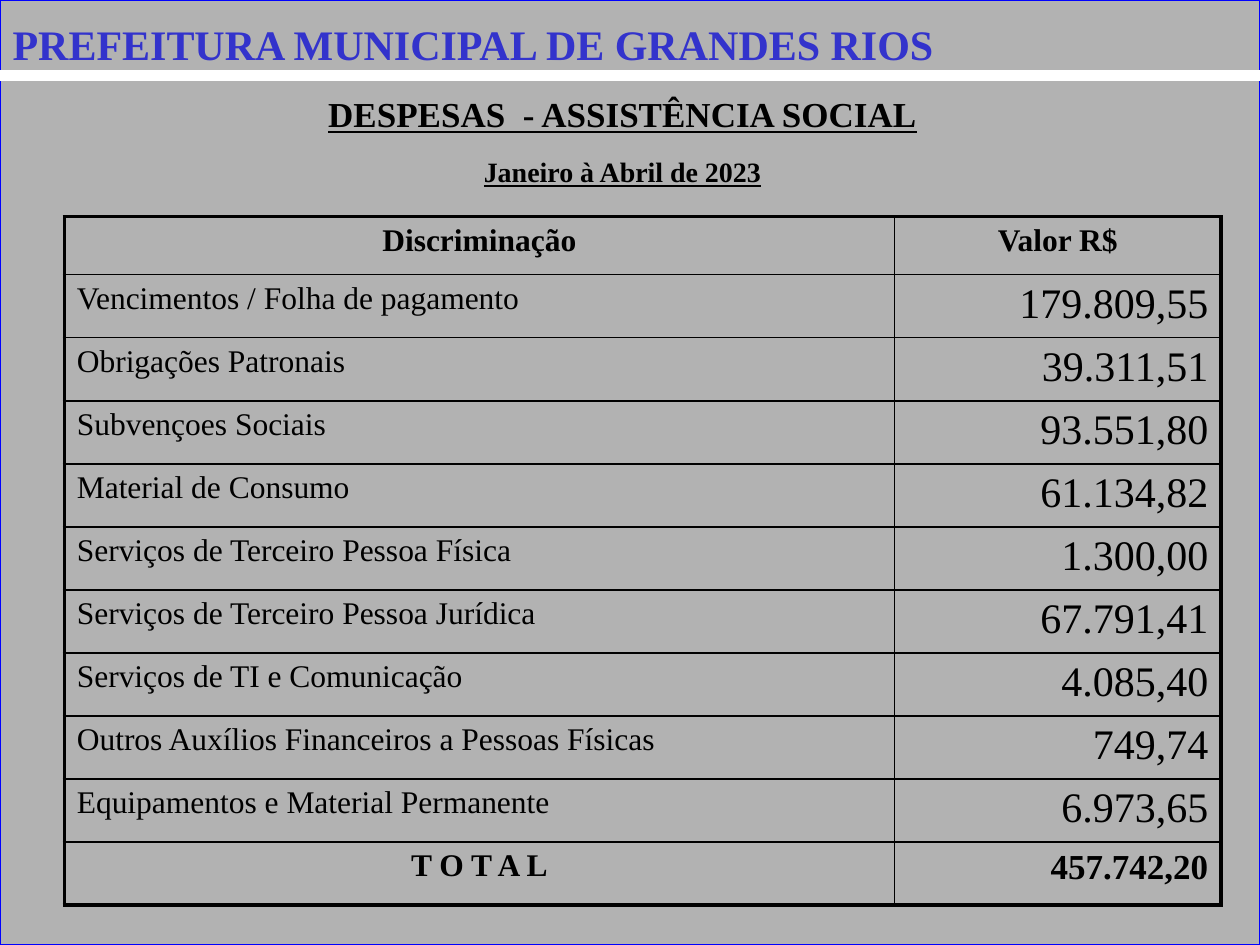
import dataclasses

import lxml.etree
import pptx
import pptx.dml.color
import pptx.enum.shapes
import pptx.enum.text
import pptx.oxml.ns
import pptx.util

Inches = pptx.util.Inches
Pt = pptx.util.Pt
ALIGN = pptx.enum.text.PP_ALIGN
ANCHOR = pptx.enum.text.MSO_ANCHOR


@dataclasses.dataclass(frozen=True)
class Theme:
    font: str = "Times New Roman"
    ink: str = "000000"
    title: str = "3333CC"
    shadow: str = "808080"
    panel: str = "B2B2B2"
    frame: str = "0000FF"
    rule: str = "FFFFFF"
    title_size: float = 24
    heading_size: float = 20
    period_size: float = 16
    label_size: float = 18
    value_size: float = 24
    total_size: float = 20
    outer_border: float = 2.25
    inner_border: float = 1


def rgb(color):
    return pptx.dml.color.RGBColor.from_string(color)


def add_xml(parent, tag, **attributes):
    return lxml.etree.SubElement(parent, pptx.oxml.ns.qn(tag), attributes)


class SlideBuilder:
    def __init__(self, slide, theme):
        self.slide = slide
        self.theme = theme

    def style_text(self, paragraph, text, size, color=None, bold=False, underline=False, align=ALIGN.LEFT):
        paragraph.text = text
        paragraph.alignment = align
        for run in paragraph.runs:
            run.font.name = self.theme.font
            run.font.size = Pt(size)
            run.font.bold = bold
            run.font.underline = underline
            run.font.color.rgb = rgb(color or self.theme.ink)

    def panel(self, left, top, width, height):
        panel = self.slide.shapes.add_shape(
            pptx.enum.shapes.MSO_SHAPE.RECTANGLE, left, top, width, height)
        panel.shadow.inherit = False
        panel.fill.solid()
        panel.fill.fore_color.rgb = rgb(self.theme.panel)
        panel.line.color.rgb = rgb(self.theme.frame)
        panel.line.width = Pt(0.75)

    def rule(self, left, top, width, weight):
        rule = self.slide.shapes.add_connector(
            pptx.enum.shapes.MSO_CONNECTOR.STRAIGHT, left, top, left + width, top)
        rule.line.color.rgb = rgb(self.theme.rule)
        rule.line.width = Pt(weight)
        add_xml(rule.element.spPr, "a:effectLst")

    def title(self, text, left, top, width, height):
        title = self.slide.shapes.title
        title.left, title.top, title.width, title.height = left, top, width, height
        frame = title.text_frame
        frame.word_wrap = True
        frame.auto_size = pptx.enum.text.MSO_AUTO_SIZE.NONE
        frame.vertical_anchor = ANCHOR.TOP
        self.style_text(frame.paragraphs[0], text, self.theme.title_size, self.theme.title, bold=True)
        # Text shadow goes right after the run's fill
        effects = lxml.etree.Element(pptx.oxml.ns.qn("a:effectLst"))
        shadow = add_xml(effects, "a:outerShdw", dist="38100", dir="2700000")
        add_xml(shadow, "a:srgbClr", val=self.theme.shadow)
        fill = title.element.find(".//" + pptx.oxml.ns.qn("a:rPr") + "/" + pptx.oxml.ns.qn("a:solidFill"))
        fill.addnext(effects)
        # The placeholder starts behind the panel, so bring it forward
        title.element.getparent().append(title.element)

    def headings(self, lines, left, top, width, height):
        frame = self.slide.shapes.add_textbox(left, top, width, height).text_frame
        frame.word_wrap = True
        for index, (text, size) in enumerate(lines):
            paragraph = frame.paragraphs[0] if index == 0 else frame.add_paragraph()
            self.style_text(paragraph, text, size, bold=True, underline=True, align=ALIGN.CENTER)
            paragraph.line_spacing = 1.5
            paragraph.space_before = Pt(2)

    def border(self, cell, outer_sides):
        properties = cell._tc.get_or_add_tcPr()
        for position, side in enumerate("LRTB"):
            weight = self.theme.outer_border if side in outer_sides else self.theme.inner_border
            line = lxml.etree.Element(pptx.oxml.ns.qn("a:ln" + side), w=str(Pt(weight)))
            add_xml(add_xml(line, "a:solidFill"), "a:srgbClr", val=self.theme.ink)
            properties.insert(position, line)

    def table(self, rows, left, top, column_widths, row_heights):
        table = self.slide.shapes.add_table(
            len(rows), len(column_widths), left, top, sum(column_widths), sum(row_heights)).table
        table.first_row = table.horz_banding = False
        for column, width in zip(table.columns, column_widths):
            column.width = width
        last = len(rows) - 1
        for r, (texts, height) in enumerate(zip(rows, row_heights)):
            table.rows[r].height = height
            emphasis = r in (0, last)
            value_size = {0: self.theme.label_size, last: self.theme.total_size}.get(
                r, self.theme.value_size)
            styles = (
                (self.theme.label_size, ALIGN.CENTER if emphasis else ALIGN.LEFT),
                (value_size, ALIGN.CENTER if r == 0 else ALIGN.RIGHT),
            )
            for c, (text, (size, align)) in enumerate(zip(texts, styles)):
                cell = table.cell(r, c)
                cell.fill.background()
                cell.vertical_anchor = ANCHOR.TOP
                self.style_text(cell.text_frame.paragraphs[0], text, size, bold=emphasis, align=align)
                self.border(cell, "LR"[c] + {0: "T", last: "B"}.get(r, ""))


EXPENSES = [
    ("Discriminação", "Valor R$"),
    ("Vencimentos / Folha de pagamento", "179.809,55"),
    ("Obrigações Patronais", "39.311,51"),
    ("Subvençoes Sociais", "93.551,80"),
    ("Material de Consumo", "61.134,82"),
    ("Serviços de Terceiro Pessoa Física", "1.300,00"),
    ("Serviços de Terceiro Pessoa Jurídica", "67.791,41"),
    ("Serviços de TI e Comunicação", "4.085,40"),
    ("Outros Auxílios Financeiros a Pessoas Físicas", "749,74"),
    ("Equipamentos e Material Permanente", "6.973,65"),
    ("T O T A L", "457.742,20"),
]


def main():
    deck = pptx.Presentation()
    deck.slide_width, deck.slide_height = Inches(10), Inches(7.5)
    theme = Theme()
    builder = SlideBuilder(deck.slides.add_slide(deck.slide_layouts[5]), theme)

    # Background and header rule
    builder.panel(0, 0, deck.slide_width, deck.slide_height)
    builder.rule(0, Inches(0.6), deck.slide_width, 6)

    # Report heading and period
    builder.headings(
        [("DESPESAS  - ASSISTÊNCIA SOCIAL", theme.heading_size),
         ("Janeiro à Abril de 2023", theme.period_size)],
        Inches(0.9), Inches(0.52), Inches(8.08), Inches(1.1))

    # Expense table
    builder.table(
        EXPENSES, Inches(0.51), Inches(1.72), [Inches(6.59), Inches(2.59)],
        [Inches(0.46)] + [Inches(0.5)] * (len(EXPENSES) - 1))

    # City hall title
    builder.title("PREFEITURA MUNICIPAL DE GRANDES RIOS",
                  Inches(0), Inches(0.1), Inches(9.49), Inches(0.5))

    deck.save("out.pptx")


if __name__ == "__main__":
    main()
